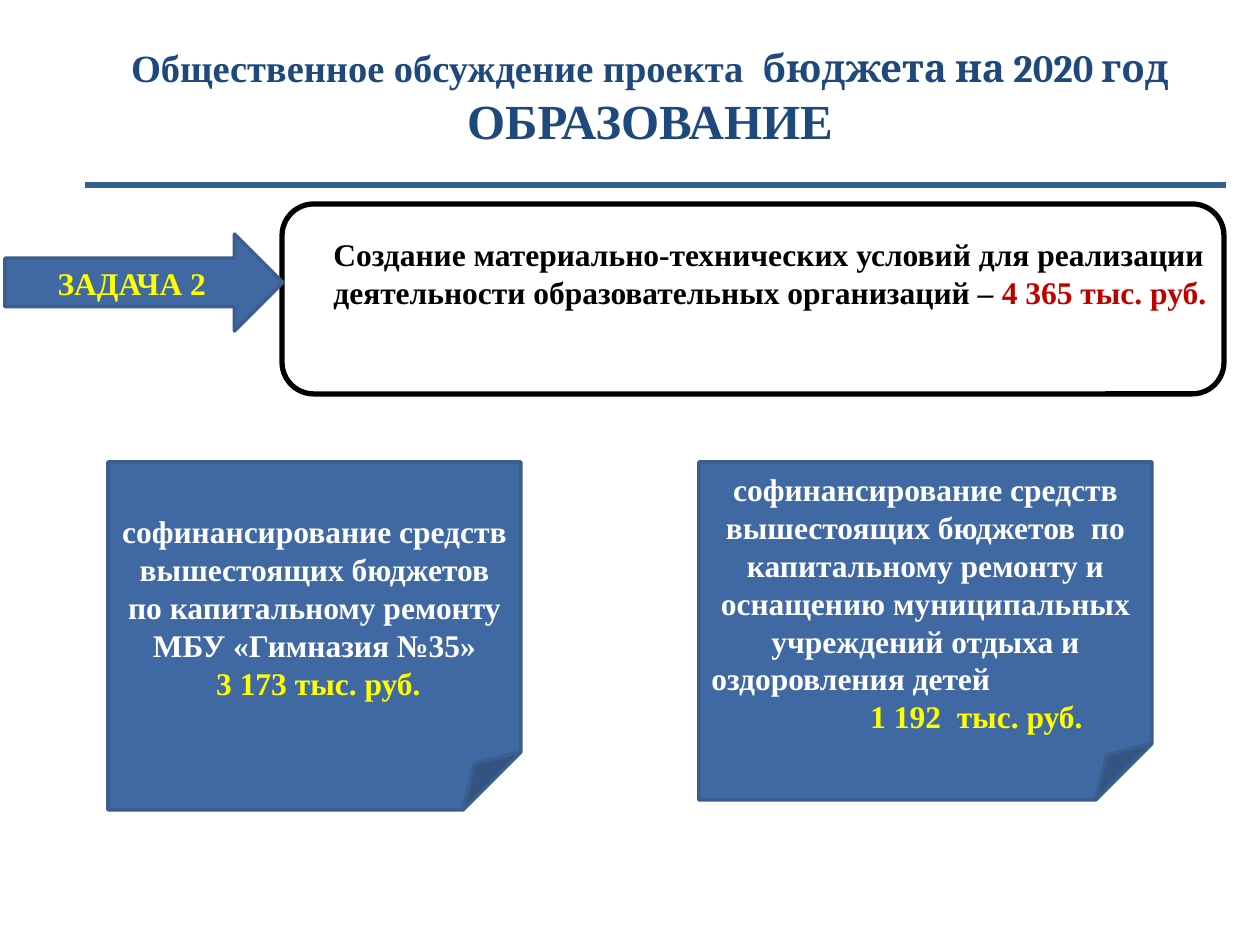
from lxml import etree
from pptx import Presentation
from pptx.dml.color import RGBColor
from pptx.enum import shapes, text
from pptx.oxml.ns import qn
from pptx.util import Pt

PX = 914400 // 126
SERIF = "Times New Roman"
BLUE, EDGE, RULE, NAVY = "4068A2", "3A5F8C", "376092", "1F497D"
WHITE, BLACK, YELLOW, RED = "FFFFFF", "000000", "FFFF00", "C00000"
CENTER, LEFT = text.PP_ALIGN.CENTER, text.PP_ALIGN.LEFT
KIND = shapes.MSO_SHAPE

# Content: paragraphs are (runs, alignment, left margin); runs are (text, format)
TITLE = [
    ([("Общественное обсуждение проекта  ", dict(size=22, color=NAVY)),
      ("бюджета на 2020 год", dict(size=22, color=NAVY, font="Cambria"))], CENTER, 38),
    ([("ОБРАЗОВАНИЕ", dict(size=28, color=NAVY))], CENTER, 0),
]
GOAL = [
    ([("Создание материально-технических условий для реализации "
       "деятельности образовательных организаций – ", dict(color=BLACK)),
      ("4 365 тыс. руб.", dict(color=RED))], LEFT, 0),
]
TASK = [([("ЗАДАЧА 2", dict(color=YELLOW))], CENTER, 0)]
SCHOOL = [
    ([("софинансирование средств вышестоящих бюджетов по капитальному ремонту "
       "МБУ «Гимназия №35»", {})], CENTER, 0),
    ([("3 173 тыс. руб.", dict(color=YELLOW))], CENTER, 8),
]
CAMPS = [
    ([("софинансирование средств вышестоящих бюджетов  по капитальному ремонту и "
       "оснащению муниципальных учреждений отдыха и", {})], CENTER, 0),
    ([("оздоровления детей", {})], LEFT, 0),
    ([("1 192  тыс. руб.", dict(color=YELLOW))], CENTER, 102),
]
# Filled shapes: kind, box in px, paragraphs
BLOCKS = [
    (KIND.FOLDED_CORNER, (108, 462, 413, 348), SCHOOL),
    (KIND.FOLDED_CORNER, (699, 462, 453, 338), CAMPS),
    (KIND.RIGHT_ARROW, (5, 234, 278, 97), TASK),
]


def rgb(value):
    return RGBColor.from_string(value)


def box(*lengths):
    return [n * PX for n in lengths]


def add_run(p, words, size=18, color=WHITE, font=SERIF):
    r = p.add_run()
    r.text = words
    r.font.size, r.font.name, r.font.bold = Pt(size), font, True
    r.font.color.rgb = rgb(color)


def write(sp, paragraphs, anchor=text.MSO_ANCHOR.MIDDLE):
    tf = sp.text_frame
    tf.word_wrap, tf.vertical_anchor = True, anchor
    for i, (runs, align, margin) in enumerate(paragraphs):
        p = tf.add_paragraph() if i else tf.paragraphs[0]
        p.alignment = align
        if margin:
            p._p.get_or_add_pPr().set("marL", str(margin * PX))
        p.space_before = Pt(0)
        for words, fmt in runs:
            add_run(p, words, **fmt)


def add_block(slide, kind, place, line, width, fill=None):
    sp = slide.shapes.add_shape(kind, *box(*place))
    sp.shadow.inherit = False
    if fill:
        sp.fill.solid()
        sp.fill.fore_color.rgb = rgb(fill)
    else:
        sp.fill.background()
    sp.line.color.rgb, sp.line.width = rgb(line), Pt(width)
    return sp


prs = Presentation()
prs.slide_width, prs.slide_height = box(1260, 945)
slide = prs.slides.add_slide(prs.slide_layouts[5])

# Goal frame and its text
add_block(slide, KIND.ROUNDED_RECTANGLE, (282, 204, 942, 190), BLACK, 3)
goal = slide.shapes.add_textbox(*box(321, 229, 902, 89))
write(goal, GOAL, text.MSO_ANCHOR.TOP)

# Notes and task arrow
for kind, place, paragraphs in BLOCKS:
    write(add_block(slide, kind, place, EDGE, 2, BLUE), paragraphs)

# Rule under the title
rule = slide.shapes.add_connector(shapes.MSO_CONNECTOR.STRAIGHT, *box(85, 185, 1226, 185))
rule.line.color.rgb, rule.line.width = rgb(RULE), Pt(3)
etree.SubElement(rule._element.spPr, qn("a:effectLst"))

# Title
title = slide.shapes.title
title.left, title.top, title.width, title.height = box(64, 21, 1134, 152)
write(title, TITLE)

prs.save("out.pptx")
